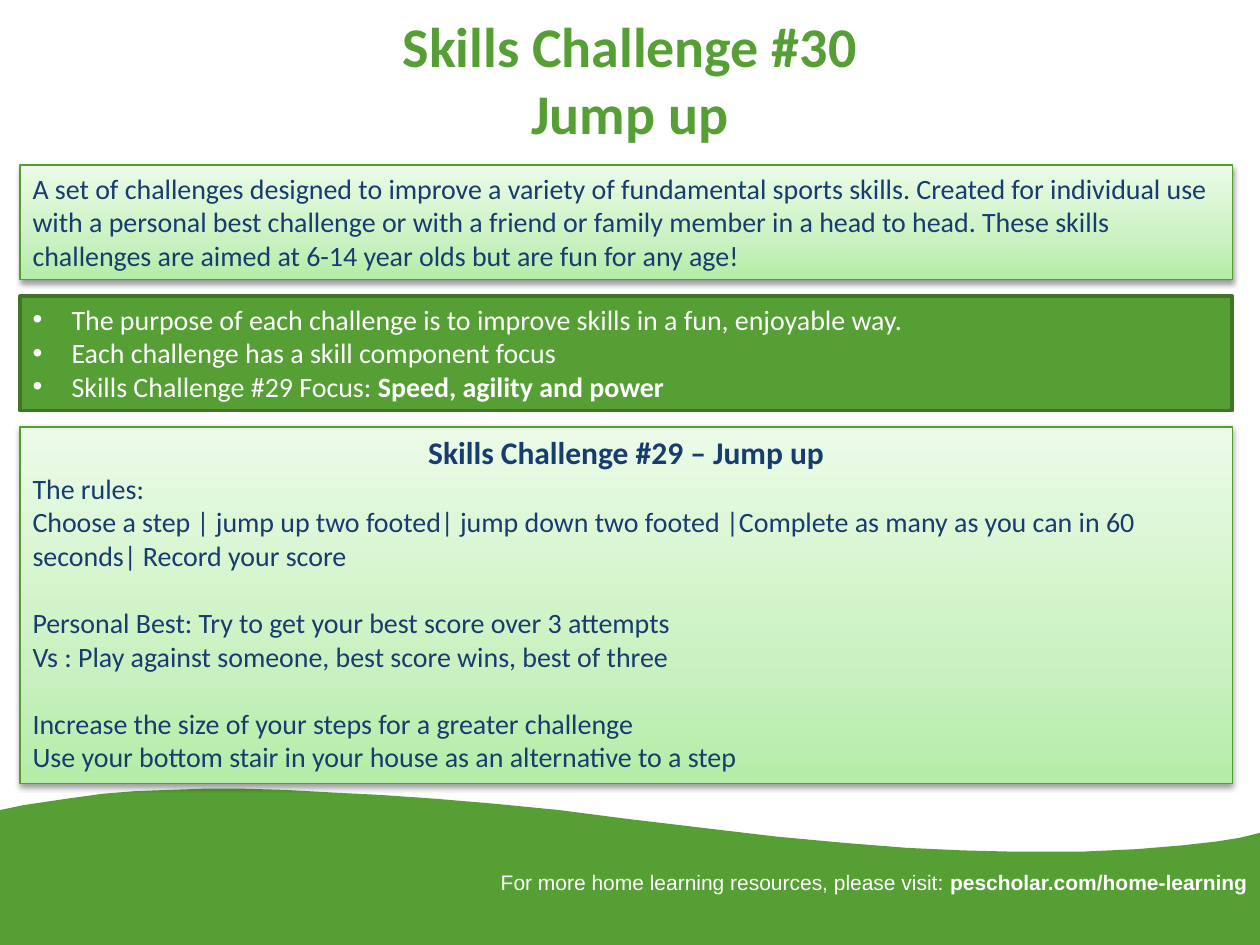
"""Build the Skills Challenge #30 home learning slide."""
import copy

import pptx
import pptx.dml.color
import pptx.enum.shapes
import pptx.enum.text
import pptx.oxml
import pptx.oxml.ns
import pptx.util

Inches = pptx.util.Inches
Pt = pptx.util.Pt
RGBColor = pptx.dml.color.RGBColor
Align = pptx.enum.text.PP_ALIGN
Anchor = pptx.enum.text.MSO_ANCHOR
qn = pptx.oxml.ns.qn

GREEN = RGBColor(0x55, 0x9F, 0x34)
DARK_GREEN = RGBColor(0x3F, 0x76, 0x26)
EDGE_GREEN = RGBColor(0x52, 0x9E, 0x30)
NAVY = RGBColor(0x17, 0x3C, 0x6F)
WHITE = RGBColor(0xFF, 0xFF, 0xFF)
GRADIENT = [
    (0, RGBColor(0xB4, 0xED, 0xA7)),
    (0.35, RGBColor(0xCB, 0xF1, 0xC2)),
    (1, RGBColor(0xEB, 0xFB, 0xE7)),
]

TITLE = ["Skills Challenge #30", "Jump up"]
INTRO = (
    "A set of challenges designed to improve a variety of fundamental sports skills. "
    "Created for individual use with a personal best challenge or with a friend or family "
    "member in a head to head. These skills challenges are aimed at 6-14 year olds but are "
    "fun for any age!"
)
PURPOSES = [
    [("The purpose of each challenge is to improve skills in a fun, enjoyable way.", False)],
    [("Each challenge has a skill component focus", False)],
    [("Skills Challenge #29 Focus: ", False), ("Speed, agility and power", True)],
]
RULES_HEADING = "Skills Challenge #29 – Jump up"
RULE_GROUPS = [
    [
        "The rules:",
        "Choose a step | jump up two footed| jump down two footed |Complete as many as you "
        "can in 60 seconds| Record your score",
    ],
    [
        "Personal Best: Try to get your best score over 3 attempts",
        "Vs : Play against someone, best score wins, best of three",
    ],
    [
        "Increase the size of your steps for a greater challenge",
        "Use your bottom stair in your house as an alternative to a step",
    ],
]
FOOTER = [
    ("For more home learning resources, please visit: ", False),
    ("pescholar.com/home-learning", True),
]
WAVE = [
    (0, 6.43), (0.19, 6.39), (0.39, 6.36), (0.6, 6.33), (0.82, 6.3), (1.07, 6.28),
    (1.33, 6.27), (1.62, 6.26), (1.93, 6.26), (2.27, 6.27), (2.63, 6.29), (3.03, 6.31),
    (3.46, 6.34), (3.93, 6.38), (4.44, 6.43), (4.98, 6.5), (5.57, 6.57), (6.16, 6.64),
    (6.7, 6.69), (7.2, 6.73), (7.64, 6.75), (8.05, 6.76), (8.58, 6.76), (9.02, 6.74),
    (9.38, 6.71), (9.65, 6.68), (9.84, 6.65), (10, 6.61),
]

WIDTH, HEIGHT = 10, 7.5
PANEL_LEFT, PANEL_TOP, PANEL_WIDTH, PANEL_GAP = 0.16, 1.31, 9.62, 0.13
PANEL_HEIGHTS = [0.91, 0.91, 2.83]


def add_span(para, text, size, color, bold=False, font="Calibri"):
    span = para.add_run()
    span.text = text
    span.font.name = font
    span.font.size = Pt(size)
    span.font.bold = bold
    span.font.color.rgb = color


def next_para(frame, align=Align.LEFT):
    first = frame.paragraphs[0]
    para = frame.add_paragraph() if first.runs else first
    para.alignment = align
    return para


def add_panel(page, top, height, line_color, line_width):
    panel = page.shapes.add_shape(
        pptx.enum.shapes.MSO_SHAPE.RECTANGLE,
        Inches(PANEL_LEFT), Inches(top), Inches(PANEL_WIDTH), Inches(height),
    )
    panel.line.color.rgb = line_color
    panel.line.width = Pt(line_width)
    panel.shadow.inherit = False
    panel.text_frame.word_wrap = True
    panel.text_frame.vertical_anchor = Anchor.TOP
    return panel


def add_light_panel(page, top, height):
    panel = add_panel(page, top, height, EDGE_GREEN, 0.75)
    panel.fill.gradient()
    panel.fill.gradient_angle = 90
    properties = panel._element.spPr
    stop_list = properties.find(".//" + qn("a:gsLst"))
    stop_list.append(copy.deepcopy(stop_list[0]))
    for stop, (position, color) in zip(panel.fill.gradient_stops, GRADIENT):
        stop.position = position
        stop.color.rgb = color
    properties.find(qn("a:effectLst")).append(pptx.oxml.parse_xml(
        f'<a:outerShdw {pptx.oxml.ns.nsdecls("a")} blurRad="{Pt(3.1)}" dist="{Pt(1.6)}" '
        'dir="5400000" rotWithShape="0"><a:srgbClr val="000000">'
        '<a:alpha val="38000"/></a:srgbClr></a:outerShdw>'
    ))
    return panel


def set_bullet(para):
    properties = para._p.get_or_add_pPr()
    properties.set("marL", str(Inches(0.31)))
    properties.set("indent", str(Inches(-0.31)))
    namespace = pptx.oxml.ns.nsdecls("a")
    properties.append(pptx.oxml.parse_xml(f'<a:buFont {namespace} typeface="Arial"/>'))
    properties.append(pptx.oxml.parse_xml(f'<a:buChar {namespace} char="•"/>'))


def add_wave(page):
    points = [(Inches(x), Inches(y)) for x, y in WAVE + [(WIDTH, HEIGHT), (0, HEIGHT)]]
    builder = page.shapes.build_freeform(*points[0])
    builder.add_line_segments(points[1:], close=True)
    wave = builder.convert_to_shape()
    wave.fill.solid()
    wave.fill.fore_color.rgb = GREEN
    wave.line.fill.background()
    wave.shadow.inherit = False


def add_title(page):
    title = page.shapes.title
    title.left, title.top, title.width, title.height = map(Inches, (0.5, 0, 9, 1.25))
    title.text_frame.auto_size = pptx.enum.text.MSO_AUTO_SIZE.NONE
    title.text_frame.vertical_anchor = Anchor.MIDDLE
    para = next_para(title.text_frame, Align.CENTER)
    for index, text in enumerate(TITLE):
        if index:
            para.add_line_break()
        add_span(para, text, 32, GREEN, True)


def add_panels(page):
    tops = [PANEL_TOP + sum(PANEL_HEIGHTS[:i]) + i * PANEL_GAP for i in range(3)]
    intro = add_light_panel(page, tops[0], PANEL_HEIGHTS[0])
    add_span(next_para(intro.text_frame), INTRO, 16, NAVY)

    purpose = add_panel(page, tops[1], PANEL_HEIGHTS[1], DARK_GREEN, 2)
    purpose.fill.solid()
    purpose.fill.fore_color.rgb = GREEN
    for spans in PURPOSES:
        para = next_para(purpose.text_frame)
        set_bullet(para)
        for text, bold in spans:
            add_span(para, text, 16, WHITE, bold)

    rules = add_light_panel(page, tops[2], PANEL_HEIGHTS[2])
    add_span(next_para(rules.text_frame, Align.CENTER), RULES_HEADING, 18, NAVY, True)
    for group_index, group in enumerate(RULE_GROUPS):
        for line_index, text in enumerate(group):
            para = next_para(rules.text_frame)
            if group_index and not line_index:
                para.space_before = Pt(19.2)
            add_span(para, text, 16, NAVY)


def add_footer(page):
    box = page.shapes.add_textbox(Inches(3.39), Inches(6.85), Inches(6.61), Inches(0.3))
    box.text_frame.word_wrap = True
    para = next_para(box.text_frame, Align.RIGHT)
    for text, bold in FOOTER:
        add_span(para, text, 12, WHITE, bold, "Arial")


def main():
    deck = pptx.Presentation()
    deck.slide_width, deck.slide_height = Inches(WIDTH), Inches(HEIGHT)
    page = deck.slides.add_slide(deck.slide_layouts.get_by_name("Title Only"))
    add_wave(page)
    add_title(page)
    add_panels(page)
    add_footer(page)
    deck.save("out.pptx")


if __name__ == "__main__":
    main()
